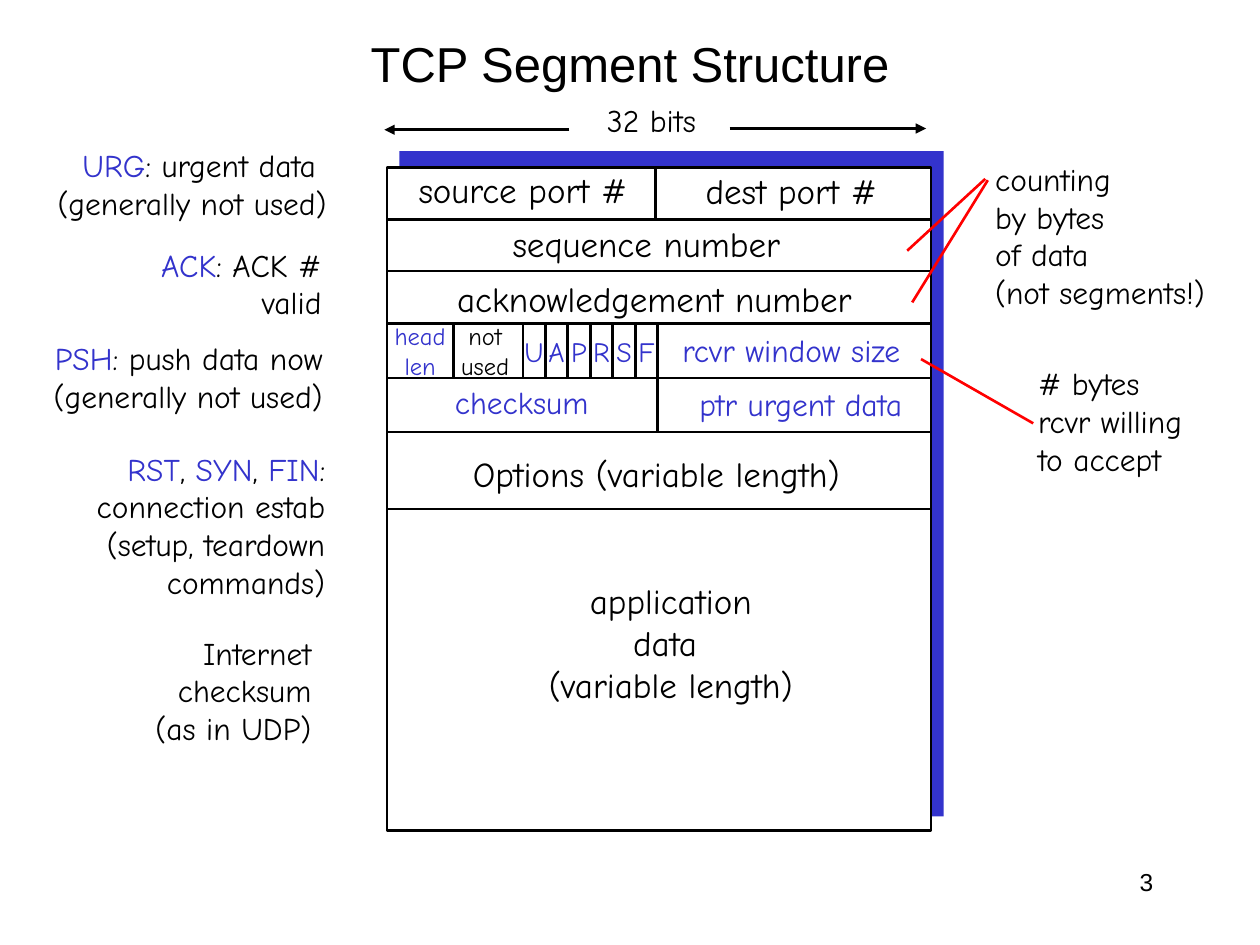
from pptx import Presentation
from pptx.util import Inches, Pt
from pptx.dml.color import RGBColor as Rgb
from pptx.enum.shapes import MSO_SHAPE as Shape, MSO_CONNECTOR as Conn
from pptx.enum.text import PP_ALIGN as Align, MSO_ANCHOR as Anchor
from pptx.oxml import parse_xml
from pptx.oxml.ns import nsdecls, qn

INK = {"black": "000000", "blue": "3333CC", "red": "FF0000", "white": "FFFFFF"}
SIDE = {"l": Align.LEFT, "c": Align.CENTER, "r": Align.RIGHT}

deck = Presentation()
deck.slide_width, deck.slide_height = Inches(10), Inches(7.5)
col, row = deck.slide_width / 100, deck.slide_height / 75
slide = deck.slides.add_slide(deck.slide_layouts[6])
shapes = slide.shapes


def write(x, y, w, h, text, size=18, ink="black", side="c", face="Comic Neue", wrap=False):
    box = shapes.add_textbox(int(x * col), int(y * row), int(w * col), int(h * row))
    frame = box.text_frame
    frame.word_wrap = wrap
    for i, line in enumerate(text.split("\n")):
        para = frame.add_paragraph() if i else frame.paragraphs[0]
        para.alignment = SIDE[side]
        para.font.size, para.font.name = Pt(size), face
        para.font.color.rgb = Rgb.from_string(INK[ink])
        for j, part in enumerate(line.split("*")):
            if part:
                run = para.add_run()
                run.text = part
                if j % 2:
                    run.font.color.rgb = Rgb.from_string(INK["blue"])
    return frame


def draw(x1, y1, x2, y2, ink="black", arrow=False):
    line = shapes.add_connector(Conn.STRAIGHT, int(x1 * col), int(y1 * row),
                                int(x2 * col), int(y2 * row))
    line.line.width = Pt(1.5)
    line.line.color.rgb = Rgb.from_string(INK[ink])
    if arrow:
        tip = parse_xml(f'<a:tailEnd {nsdecls("a")} type="triangle"/>')
        line._element.spPr.find(qn("a:ln")).append(tip)
    line._element.spPr.append(parse_xml(f'<a:effectLst {nsdecls("a")}/>'))


title = write(7.5, 2.5, 85, 5, "TCP Segment Structure", 28, face="Arial", wrap=True)
title.vertical_anchor = Anchor.MIDDLE
write(71.7, 68.3, 20.8, 5, "3", 14, side="r", face="Arial", wrap=True)

left, right, mid = 30.7, 73.9, 52.2
top, foot = 13.3, 65.9
for x, y, h, ink in [(31.7, 12, 52.8, "blue"), (left, top, foot - top, "white")]:
    rect = shapes.add_shape(Shape.RECTANGLE, int(x * col), int(y * row),
                            int((right - left) * col), int(h * row))
    rect.shadow.inherit = False
    rect.fill.solid()
    rect.fill.fore_color.rgb = Rgb.from_string(INK[ink])
    if ink == "blue":
        rect.line.fill.background()
    else:
        rect.line.width = Pt(1.5)
        rect.line.color.rgb = Rgb.from_string(INK["black"])

for y in [17.4, 21.5, 25.7, 30, 34.3, 40.4]:
    draw(left, y, right, y)
draw(52, top, 52, 17.4)
draw(mid, 25.7, mid, 34.3)
draw(36, 25.7, 36, 30)

first = 41.5
step = (mid - first) / 6
for i, flag in enumerate("UAPRSF"):
    draw(first + i * step, 25.7, first + i * step, 30)
    write(first + (i + 0.5) * step - 1.8, 26.05, 3.6, 3.7, flag, 16, "blue")

for x, y, w, h, text, size, ink in [
    (46.5, 7.5, 10.4, 4, "32 bits", 18, "black"),
    (31.4, 12.9, 20.2, 4.3, "source port #", 20, "black"),
    (54.1, 13, 17.4, 4.3, "dest port #", 20, "black"),
    (37.7, 17.2, 27.2, 4.3, "sequence number", 20, "black"),
    (33.3, 21.5, 37.3, 4.3, "acknowledgement number", 20, "black"),
    (30.2, 25, 6.3, 5.7, "head\nlen", 14, "blue"),
    (35.4, 25, 6.2, 5.7, "not\nused", 14, "black"),
    (52.2, 25.8, 21.2, 4, "rcvr window size", 18, "blue"),
    (34.8, 29.9, 13.2, 4, "checksum", 18, "blue"),
    (53.5, 30.1, 20.1, 4, "ptr urgent data", 18, "blue"),
    (35, 35.4, 34.2, 4.3, "Options (variable length)", 20, "black"),
    (41.6, 45.5, 23.3, 11, "application\ndata \n(variable length)", 20, "black"),
]:
    write(x, y, w, h, text, size, ink)

for x, y, w, h, side, text in [
    (1.9, 11.1, 25, 7, "r", "*URG*: urgent data \n(generally not used)"),
    (10.4, 19, 16.1, 7, "r", "*ACK*: ACK #\nvalid"),
    (1.6, 26.4, 25, 7, "r", "*PSH*: push data now\n(generally not used)"),
    (5.2, 35.2, 21.6, 13, "r",
     "*RST*, *SYN*, *FIN*:\nconnection estab\n(setup, teardown\ncommands)"),
    (10.9, 49.8, 14.8, 10, "r", "Internet\nchecksum\n(as in UDP)"),
    (78, 12.2, 19.9, 13, "l", "counting\nby bytes\nof data\n(not segments!)"),
    (81.4, 28.4, 14.7, 10, "l", "# bytes\nrcvr willing\nto accept"),
]:
    write(x, y, w, h, text, side=side)

draw(57.9, 10.2, 73.5, 10.2, arrow=True)
draw(45.2, 10.3, 30.5, 10.3, arrow=True)
for ends in [(82, 33.6, 73.1, 28.5), (78.4, 14.3, 72.4, 24), (78.2, 14.2, 72, 19.9)]:
    draw(*ends, ink="red")

deck.save("out.pptx")
